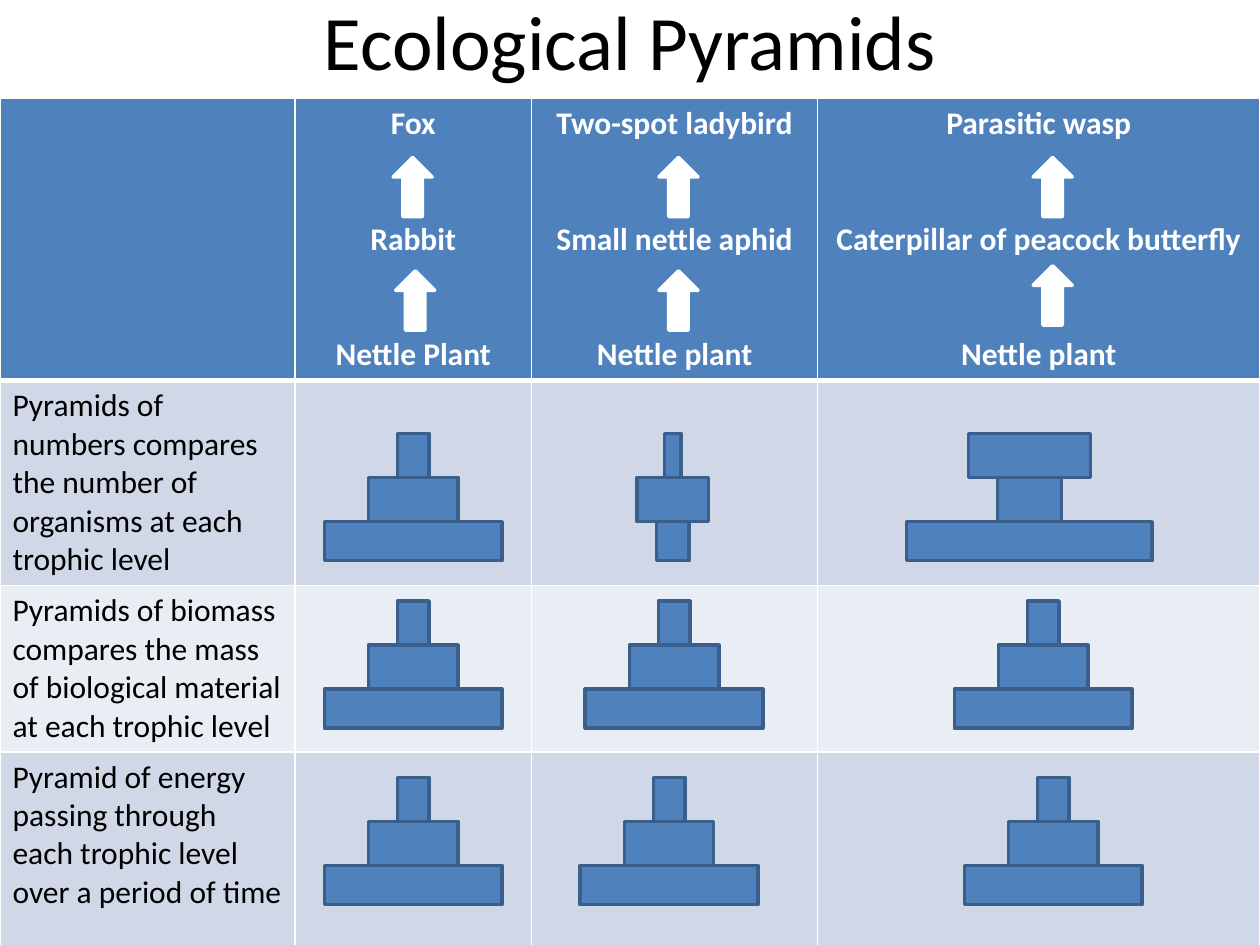
from lxml import etree
from pptx import Presentation
from pptx.dml.color import RGBColor
from pptx.enum.shapes import MSO_SHAPE
from pptx.enum.text import MSO_ANCHOR, PP_ALIGN
from pptx.oxml.ns import qn
from pptx.util import Inches, Pt

UP_ARROW, RECTANGLE = MSO_SHAPE.UP_ARROW, MSO_SHAPE.RECTANGLE
CENTER, LEFT, MIDDLE = PP_ALIGN.CENTER, PP_ALIGN.LEFT, MSO_ANCHOR.MIDDLE
FONT = "Calibri"
BLUE, DARK_BLUE, WHITE, BLACK = "4F81BD", "3A5F8C", "FFFFFF", "000000"
BANDS = ["D0D8E8", "E9EDF4"]
COLUMN_WIDTHS = [2.34, 1.88, 2.27, 3.51]
ROW_HEIGHTS = [2.24, 1.62, 1.32, 1.54]
FOOD_CHAINS = [
    ["Fox", "Rabbit", "Nettle Plant"],
    ["Two-spot ladybird", "Small nettle aphid", "Nettle plant"],
    ["Parasitic wasp", "Caterpillar of peacock butterfly", "Nettle plant"],
]
DESCRIPTIONS = [
    "Pyramids of numbers compares the number of organisms at each trophic level",
    "Pyramids of biomass compares the mass of biological material at each trophic level",
    "Pyramid of energy passing through each trophic level over a period of time",
]
ARROWS = [(3.12, 1.25), (3.14, 2.15), (5.23, 1.25), (5.23, 2.15), (8.2, 1.25), (8.2, 2.11)]
TIER_HEIGHTS = [0.35, 0.35, 0.31]
REGULAR = [0.25, 0.71, 1.41]
PYRAMIDS = [
    (3.44, [(3.28, REGULAR), (5.34, [0.13, 0.57, 0.26]), (8.17, [0.97, 0.51, 1.95])]),
    (4.77, [(3.28, REGULAR), (5.35, REGULAR), (8.28, REGULAR)]),
    (6.17, [(3.28, REGULAR), (5.31, REGULAR), (8.36, REGULAR)]),
]


def color(value):
    """Return the colour for a hex string."""
    return RGBColor.from_string(value)


def write_text(frame, lines, size=18, ink=BLACK, bold=False, align=LEFT, gap=0):
    """Fill a text frame with one paragraph per line, spaced by gap points."""
    for index, line in enumerate(lines):
        paragraph = frame.add_paragraph() if index else frame.paragraphs[0]
        paragraph.alignment = align
        paragraph.space_before = Pt(gap if index else 0)
        run = paragraph.add_run()
        run.text = line
        run.font.name, run.font.size, run.font.bold = FONT, Pt(size), bold
        run.font.color.rgb = color(ink)


def format_cell(cell, fill, bottom_width=1):
    """Give a cell white borders and a solid fill."""
    properties = cell._tc.get_or_add_tcPr()
    for side, width in zip("LRTB", [1, 1, 1, bottom_width]):
        border = etree.SubElement(properties, qn(f"a:ln{side}"), w=str(Pt(width)))
        solid = etree.SubElement(border, qn("a:solidFill"))
        etree.SubElement(solid, qn("a:srgbClr"), val=WHITE)
    cell.fill.solid()
    cell.fill.fore_color.rgb = color(fill)


def add_block(slide, kind, left, top, width, height, fill, line):
    """Add a filled and outlined preset shape."""
    shape = slide.shapes.add_shape(
        kind, Inches(left), Inches(top), Inches(width), Inches(height)
    )
    shape.shadow.inherit = False
    shape.fill.solid()
    shape.fill.fore_color.rgb = color(fill)
    shape.line.color.rgb = color(line)
    shape.line.width = Pt(2)


def add_title(slide, left, top, width, height):
    """Place the slide title in its box."""
    title = slide.shapes.title
    title.left, title.top = Inches(left), Inches(top)
    title.width, title.height = Inches(width), Inches(height)
    title.text_frame.vertical_anchor = MIDDLE
    write_text(title.text_frame, ["Ecological Pyramids"], size=44, align=CENTER)


def add_comparison_table(slide, left, top, width, height):
    """Place the table of food chains against pyramid types."""
    table = slide.shapes.add_table(
        len(ROW_HEIGHTS), len(COLUMN_WIDTHS),
        Inches(left), Inches(top), Inches(width), Inches(height),
    ).table
    for column, column_width in zip(table.columns, COLUMN_WIDTHS):
        column.width = Inches(column_width)
    for row_index, row_height in enumerate(ROW_HEIGHTS):
        row = table.rows[row_index]
        row.height = Inches(row_height)
        for cell in row.cells:
            if row_index:
                format_cell(cell, BANDS[(row_index - 1) % 2])
            else:
                format_cell(cell, BLUE, bottom_width=3)
    for index, chain in enumerate(FOOD_CHAINS, 1):
        write_text(table.cell(0, index).text_frame, chain,
                   ink=WHITE, bold=True, align=CENTER, gap=44)
    for index, description in enumerate(DESCRIPTIONS, 1):
        write_text(table.cell(index, 0).text_frame, [description])


def add_pyramid(slide, center, top, widths):
    """Stack three centred tiers downwards from the top."""
    for width, height in zip(widths, TIER_HEIGHTS):
        add_block(slide, RECTANGLE, center - width / 2, top, width, height, BLUE, DARK_BLUE)
        top += height


def main():
    """Build and save the slide."""
    presentation = Presentation()
    presentation.slide_width, presentation.slide_height = Inches(10), Inches(7.5)
    slide = presentation.slides.add_slide(presentation.slide_layouts[5])
    add_title(slide, 0.5, -0.31, 9, 1.25)
    add_comparison_table(slide, 0, 0.78, 10, 6.72)
    for left, top in ARROWS:
        add_block(slide, UP_ARROW, left, top, 0.31, 0.47, WHITE, WHITE)
    for top, pyramids in PYRAMIDS:
        for center, widths in pyramids:
            add_pyramid(slide, center, top, widths)
    presentation.save("out.pptx")


if __name__ == "__main__":
    main()
